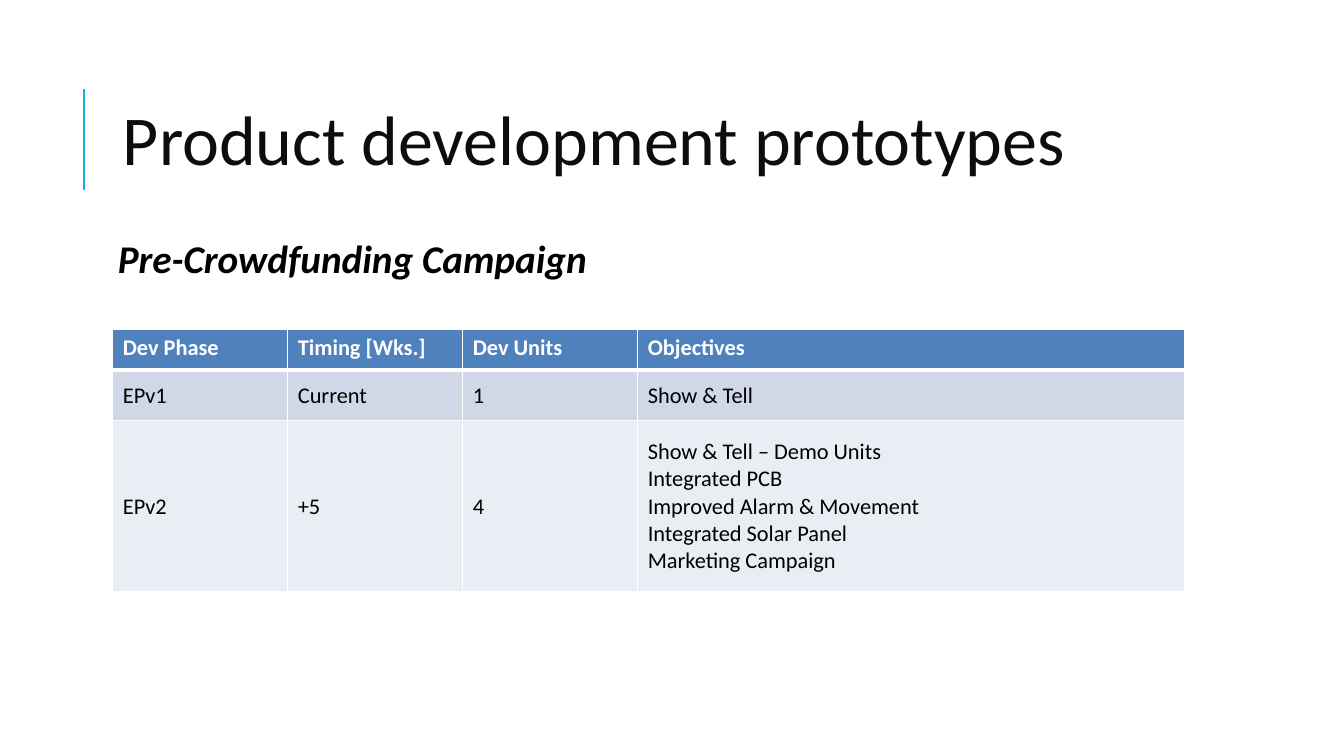
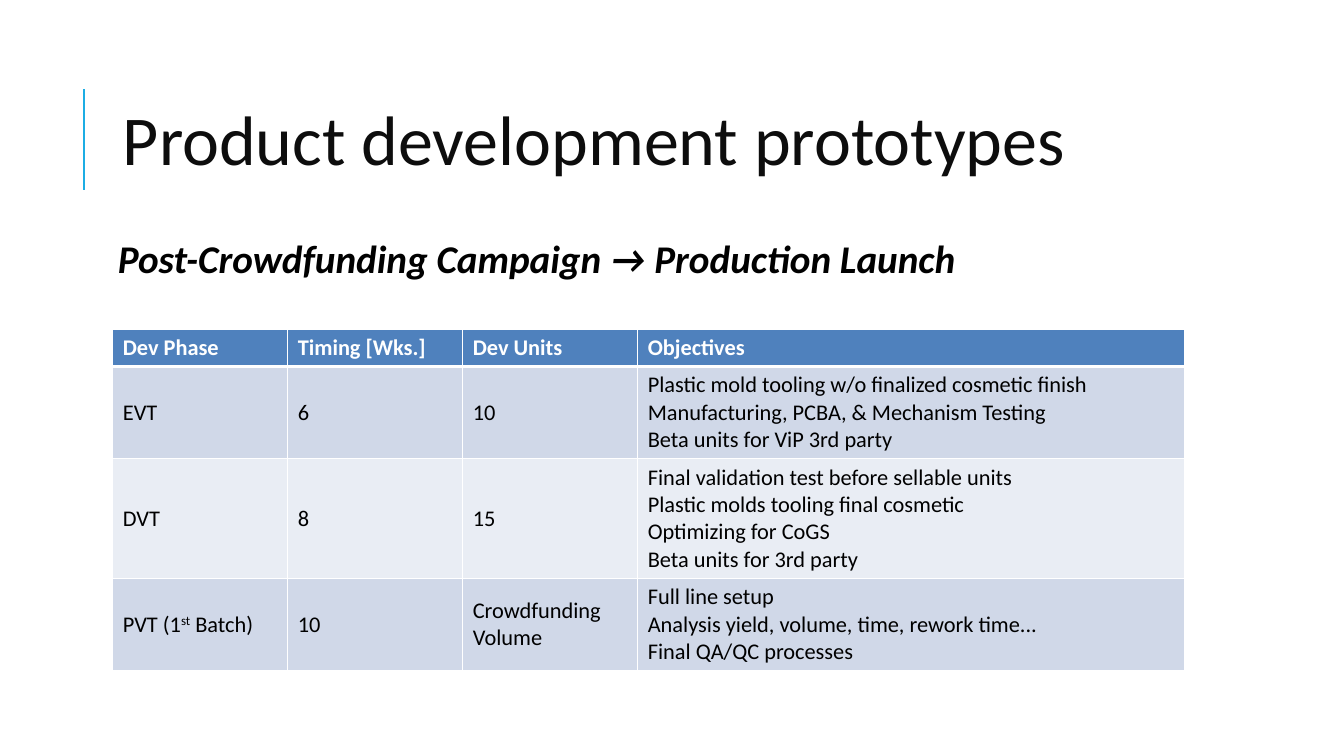
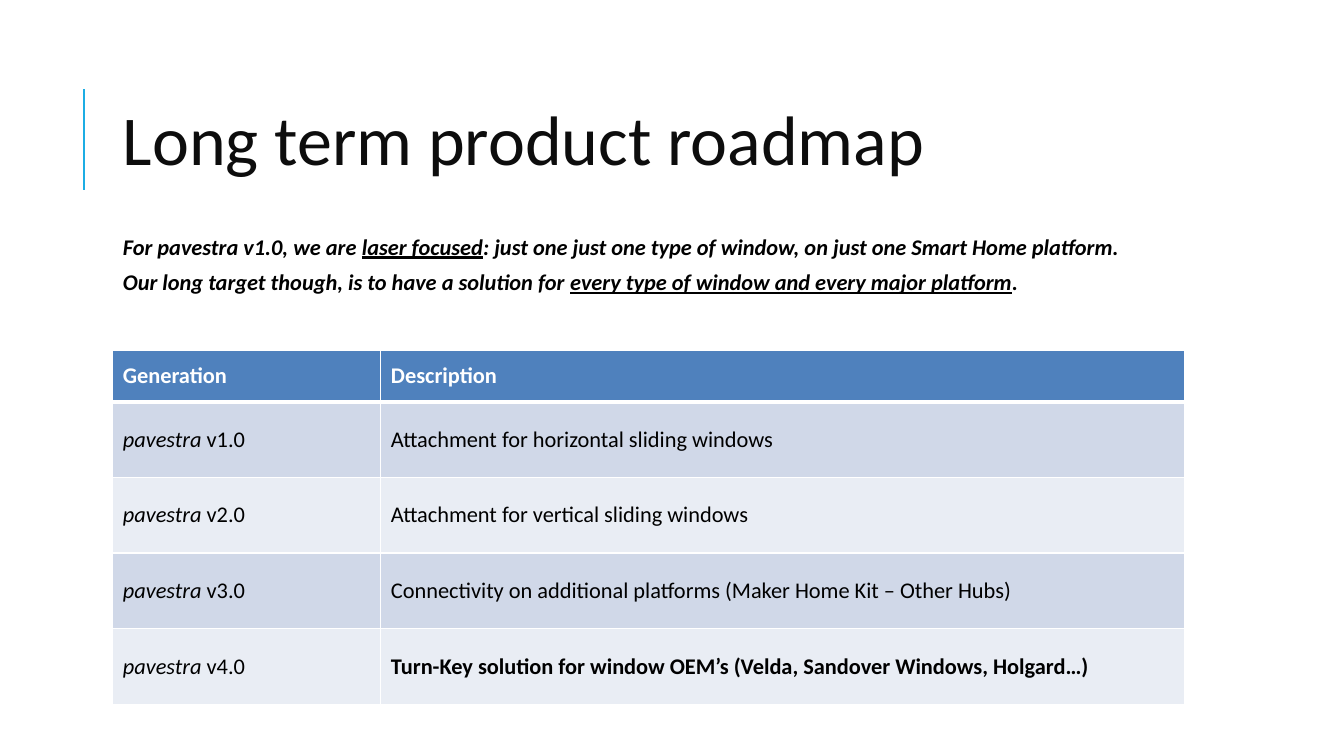
"""Build three product planning slides: two prototype tables and a roadmap."""
from dataclasses import dataclass
from typing import Any, Union

import lxml.etree
import pptx
import pptx.dml.color
import pptx.enum.shapes
import pptx.enum.text
import pptx.oxml.ns
import pptx.util

Pt = pptx.util.Pt
qn = pptx.oxml.ns.qn


@dataclass(frozen=True)
class Theme:
    font: str = "Calibri"
    title_size: float = 50
    lead_size: float = 28
    text_size: float = 16
    title_ink: str = "0D0D0D"
    ink: str = "000000"
    white: str = "FFFFFF"
    accent: str = "1CADE4"
    header: str = "4F81BD"
    bands: tuple[str, str] = ("D0D8E8", "E9EDF4")
    grid: float = 1
    header_grid: float = 3


@dataclass(frozen=True)
class Box:
    left: float
    top: float
    width: float
    height: float


@dataclass(frozen=True)
class Span:
    text: str
    bold: bool = False
    italic: bool = False
    underline: bool = False
    raised: bool = False


Line = Union[str, tuple[Span, ...]]
Entry = Union[str, tuple[Line, ...]]


@dataclass(frozen=True)
class Lead:
    lines: tuple[Line, ...]
    box: Box
    size: float
    inset: float
    gap: float = 0


@dataclass(frozen=True)
class Grid:
    top: float
    first_columns: tuple[float, ...]
    row_heights: tuple[float, ...]
    rows: tuple[tuple[Entry, ...], ...]
    header_middle: bool = False


@dataclass(frozen=True)
class Page:
    title: str
    lead: Lead
    grid: Grid


THEME = Theme()
LEFT, WIDTH = 80.6, 765.4
TITLE_BOX = Box(LEFT, 44.6, WIDTH, 118)
LEAD_BOX = Box(LEFT, 164, WIDTH, 316.8)
INTRO_BOX = Box(LEFT, 162.7, WIDTH, 52)
PROTOTYPES = "Product development prototypes"
PHASE_HEADER = ("Dev Phase", "Timing [Wks.]", "Dev Units", "Objectives")
PHASE_COLUMNS = (125, 125, 125)


def campaign(text: str) -> Lead:
    """Return the large lead line of a prototype slide."""
    return Lead((text,), LEAD_BOX, THEME.lead_size, 3.6)


def generation(version: str) -> Entry:
    """Return the product name with its version."""
    return ((Span("pavestra", italic=True), Span(f" {version}")),)


PAGES = (
    Page(
        PROTOTYPES,
        campaign("Pre-Crowdfunding Campaign"),
        Grid(235, PHASE_COLUMNS, (29.5, 36, 122.4), (
            PHASE_HEADER,
            ("EPv1", "Current", "1", "Show & Tell"),
            ("EPv2", "+5", "4", (
                "Show & Tell – Demo Units",
                "Integrated PCB",
                "Improved Alarm & Movement",
                "Integrated Solar Panel",
                "Marketing Campaign",
            )),
        )),
    ),
    Page(
        PROTOTYPES,
        campaign("Post-Crowdfunding Campaign → Production Launch"),
        Grid(235, PHASE_COLUMNS, (26.7, 65.8, 85.3, 65.8), (
            PHASE_HEADER,
            ("EVT", "6", "10", (
                "Plastic mold tooling w/o finalized cosmetic finish",
                "Manufacturing, PCBA, & Mechanism Testing",
                "Beta units for ViP 3rd party",
            )),
            ("DVT", "8", "15", (
                "Final validation test before sellable units",
                "Plastic molds tooling final cosmetic",
                "Optimizing for CoGS",
                "Beta units for 3rd party",
            )),
            (((Span("PVT (1"), Span("st", raised=True), Span(" Batch)")),),
             "10", "Crowdfunding Volume", (
                "Full line setup",
                "Analysis yield, volume, time, rework time...",
                "Final QA/QC processes",
            )),
        )),
    ),
    Page(
        "Long term product roadmap",
        Lead((
            (Span("For pavestra v1.0, we are "),
             Span("laser focused", underline=True),
             Span(": just one just one type of window, on just one Smart Home platform.")),
            (Span("Our long target though, is to have a solution for "),
             Span("every type of window and every major platform", underline=True),
             Span(".")),
        ), INTRO_BOX, THEME.text_size, 7.2, 6),
        Grid(250, (191.5,), (37, 54, 54, 54, 54), (
            ("Generation", "Description"),
            (generation("v1.0"), "Attachment for horizontal sliding windows"),
            (generation("v2.0"), "Attachment for vertical sliding windows"),
            (generation("v3.0"),
             "Connectivity on additional platforms (Maker Home Kit – Other Hubs)"),
            (generation("v4.0"), ((Span(
                "Turn-Key solution for window OEM’s (Velda, Sandover Windows, Holgard…)",
                bold=True),),)),
        ), header_middle=True),
    ),
)


def rgb(value: str) -> pptx.dml.color.RGBColor:
    """Return the colour for a hex value."""
    return pptx.dml.color.RGBColor.from_string(value)


def place(shape: Any, box: Box) -> None:
    """Move and size a shape."""
    shape.left, shape.top = Pt(box.left), Pt(box.top)
    shape.width, shape.height = Pt(box.width), Pt(box.height)


def write(frame: Any, lines: tuple[Line, ...], size: float, color: str,
          bold: bool = False, italic: bool = False) -> None:
    """Fill a text frame with one paragraph for each line."""
    for index, line in enumerate(lines):
        paragraph = frame.add_paragraph() if index else frame.paragraphs[0]
        paragraph.alignment = pptx.enum.text.PP_ALIGN.LEFT
        font = paragraph.font
        font.name, font.size = THEME.font, Pt(size)
        font.bold, font.italic = bold, italic
        font.color.rgb = rgb(color)
        for span in (Span(line),) if isinstance(line, str) else line:
            run = paragraph.add_run()
            run.text = span.text
            if span.bold:
                run.font.bold = True
            if span.italic:
                run.font.italic = True
            if span.underline:
                run.font.underline = True
            if span.raised:
                run.font._element.set("baseline", "30000")


def draw_title(slide: Any, text: str) -> None:
    """Write the title and draw the accent rule beside it."""
    title = slide.shapes.title
    place(title, TITLE_BOX)
    frame = title.text_frame
    frame.auto_size = pptx.enum.text.MSO_AUTO_SIZE.NONE
    frame.vertical_anchor = pptx.enum.text.MSO_ANCHOR.MIDDLE
    write(frame, (text,), THEME.title_size, THEME.title_ink)
    frame.paragraphs[0].line_spacing = 0.8
    rule = slide.shapes.add_connector(
        pptx.enum.shapes.MSO_CONNECTOR.STRAIGHT, Pt(60), Pt(135.4), Pt(60), Pt(63.4))
    rule.line.color.rgb = rgb(THEME.accent)
    rule.line.width = Pt(1.5)
    lxml.etree.SubElement(rule._element.spPr, qn("a:effectLst"))


def draw_lead(slide: Any, lead: Lead) -> None:
    """Write the lead text in the body placeholder without bullets."""
    body = slide.placeholders[1]
    place(body, lead.box)
    frame = body.text_frame
    frame.auto_size = pptx.enum.text.MSO_AUTO_SIZE.NONE
    frame.margin_left = frame.margin_right = Pt(lead.inset)
    frame.margin_top = frame.margin_bottom = Pt(3.6)
    write(frame, lead.lines, lead.size, THEME.ink, bold=True, italic=True)
    for paragraph in frame.paragraphs:
        paragraph.space_before, paragraph.space_after = Pt(0), Pt(lead.gap)
        properties = paragraph._p.get_or_add_pPr()
        properties.set("marL", "0")
        properties.set("indent", "0")
        bullet = lxml.etree.Element(qn("a:buNone"))
        properties.find(qn("a:defRPr")).addprevious(bullet)


def border(cell: Any, side: str, width: float) -> None:
    """Add one white border to a cell."""
    line = lxml.etree.SubElement(
        cell._tc.get_or_add_tcPr(), qn(f"a:ln{side}"), w=str(int(Pt(width))))
    fill = lxml.etree.SubElement(line, qn("a:solidFill"))
    lxml.etree.SubElement(fill, qn("a:srgbClr"), val=THEME.white)


def draw_grid(slide: Any, grid: Grid) -> None:
    """Draw a table with a header row and banded body rows."""
    widths = (*grid.first_columns, WIDTH - sum(grid.first_columns))
    table = slide.shapes.add_table(
        len(grid.rows), len(widths), Pt(LEFT), Pt(grid.top),
        Pt(WIDTH), Pt(sum(grid.row_heights))).table
    table.horz_banding = False
    for column, width in zip(table.columns, widths):
        column.width = Pt(width)
    for row_index, (entries, height) in enumerate(zip(grid.rows, grid.row_heights)):
        table.rows[row_index].height = Pt(height)
        is_header = row_index == 0
        fill = THEME.header if is_header else THEME.bands[(row_index - 1) % 2]
        top = THEME.header_grid if row_index == 1 else THEME.grid
        bottom = THEME.header_grid if is_header else THEME.grid
        for column_index, entry in enumerate(entries):
            cell = table.cell(row_index, column_index)
            for side, width in zip("LRTB", (THEME.grid, THEME.grid, top, bottom)):
                border(cell, side, width)
            cell.fill.solid()
            cell.fill.fore_color.rgb = rgb(fill)
            if grid.header_middle or not is_header:
                cell.vertical_anchor = pptx.enum.text.MSO_ANCHOR.MIDDLE
            write(cell.text_frame, (entry,) if isinstance(entry, str) else entry,
                  THEME.text_size, THEME.white if is_header else THEME.ink, bold=is_header)


def main() -> None:
    """Build and save the presentation."""
    deck = pptx.Presentation()
    deck.slide_width, deck.slide_height = Pt(960), Pt(540)
    for page in PAGES:
        slide = deck.slides.add_slide(deck.slide_layouts[1])
        draw_title(slide, page.title)
        draw_lead(slide, page.lead)
        draw_grid(slide, page.grid)
    deck.save("out.pptx")


if __name__ == "__main__":
    main()
